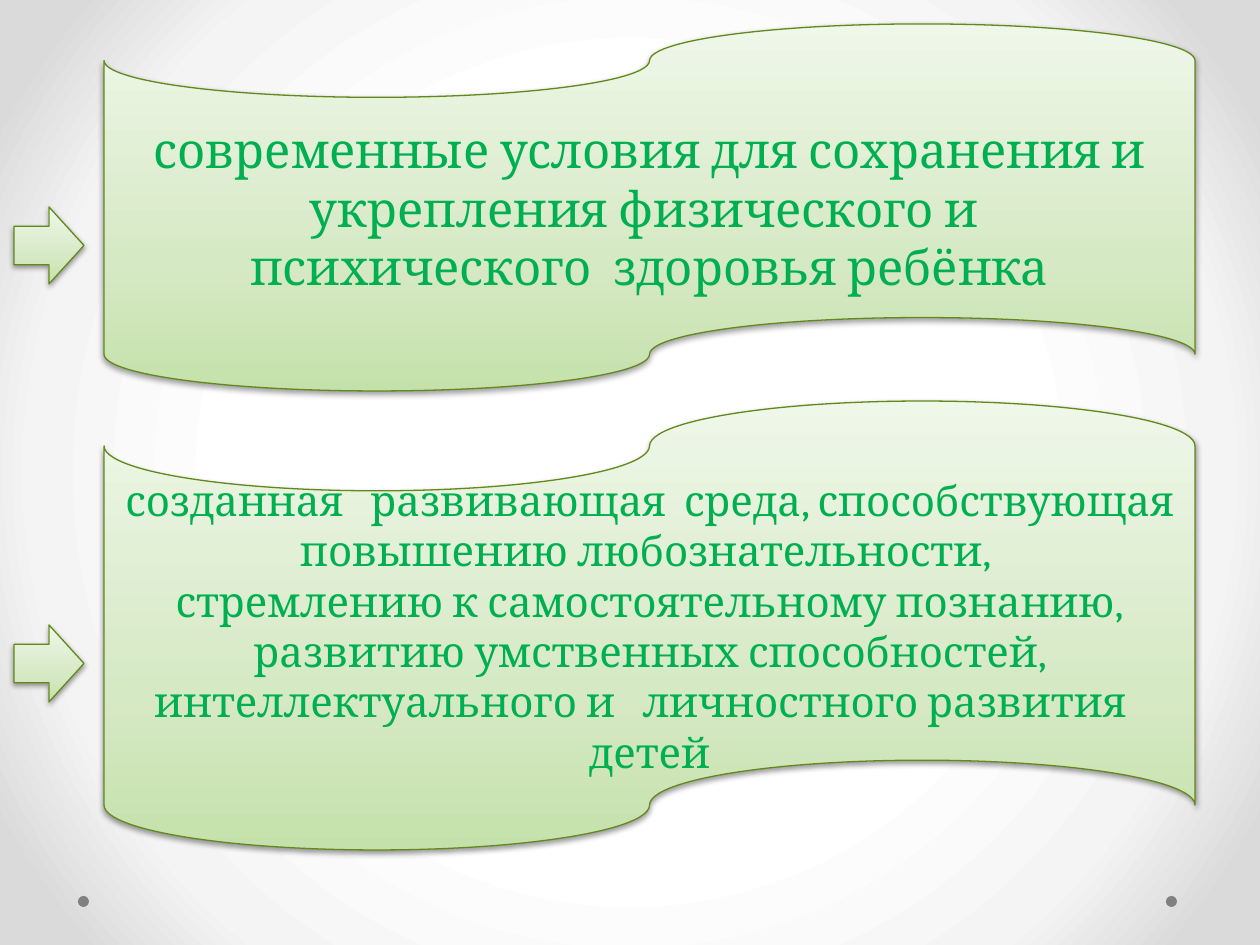
from dataclasses import dataclass

from lxml.etree import SubElement
from pptx import Presentation
from pptx.dml.color import RGBColor
from pptx.enum.shapes import MSO_SHAPE
from pptx.enum.text import MSO_ANCHOR, PP_ALIGN
from pptx.oxml.ns import qn
from pptx.util import Pt

PX = 914400 / 126


@dataclass(frozen=True)
class Theme:
    font: str = "Cambria"
    text: str = "00B050"
    line: str = "62891C"
    dot: str = "808080"
    shadow: str = "000000"
    line_width: float = 0.75
    large: int = 28
    small: int = 24
    green: tuple = ((0, "C5E1AB"), (35, "D6E9C5"), (100, "EFF7E9"))
    backdrop: tuple = ((50, "FFFFFF"), (76, "F4F4F4"), (92, "DADADA"))


THEME = Theme()

TAPES = [
    ((104, 24, 1091, 367), THEME.large, [
        "современные условия для сохранения и укрепления физического и ",
        "психического  здоровья ребёнка",
    ]),
    ((104, 401, 1091, 449), THEME.small, [
        "созданная   развивающая  среда, способствующая повышению любознательности, ",
        "стремлению к самостоятельному познанию,",
        "развитию умственных способностей, интеллектуального и   личностного развития   детей",
    ]),
]
ARROW_TOPS = (207, 625)
DOT_LEFTS = (78, 1166)


def emu(*lengths):
    return [round(n * PX) for n in lengths]


def add(parent, tag, **attrs):
    return SubElement(parent, qn(tag), {k: str(v) for k, v in attrs.items()})


def set_format(target, values):
    for name, value in values.items():
        setattr(target, name, value)


def set_gradient(fill, stops):
    """Fill with any number of stops and return the gradFill element."""
    fill.gradient()
    stop_list = fill.gradient_stops[0]._gs.getparent()
    for old in list(stop_list):
        stop_list.remove(old)
    for position, color in stops:
        stop = add(stop_list, "a:gs", pos=position * 1000)
        add(stop, "a:srgbClr", val=color)
    return stop_list.getparent()


def set_background(s):
    grad = set_gradient(s.background.fill, THEME.backdrop)
    grad.remove(grad.find(qn("a:lin")))
    circle = add(grad, "a:path", path="circle")
    add(circle, "a:fillToRect", l=50000, t=50000, r=50000, b=50000)


def add_shadow(sp):
    sp.shadow.inherit = False
    effects = sp._element.spPr.find(qn("a:effectLst"))
    shadow = add(effects, "a:outerShdw", blurRad=Pt(3.1), dist=Pt(1.6),
                 dir=90 * 60000, rotWithShape=0)
    color = add(shadow, "a:srgbClr", val=THEME.shadow)
    add(color, "a:alpha", val=38000)


def add_green_shape(s, kind, box):
    sp = s.shapes.add_shape(kind, *emu(*box))
    set_gradient(sp.fill, THEME.green)
    sp.fill.gradient_angle = 90
    sp.line.color.rgb = RGBColor.from_string(THEME.line)
    sp.line.width = Pt(THEME.line_width)
    add_shadow(sp)
    return sp


def add_tape(s, box, size, lines):
    sp = add_green_shape(s, MSO_SHAPE.FLOWCHART_PUNCHED_TAPE, box)
    tf = sp.text_frame
    set_format(tf, {"word_wrap": True, "vertical_anchor": MSO_ANCHOR.MIDDLE})
    for i, line in enumerate(lines):
        p = tf.add_paragraph() if i else tf.paragraphs[0]
        p.alignment = PP_ALIGN.CENTER
        r = p.add_run()
        r.text = line
        set_format(r.font, {"name": THEME.font, "size": Pt(size)})
        r.font.color.rgb = RGBColor.from_string(THEME.text)


def add_dot(s, left):
    sp = s.shapes.add_shape(MSO_SHAPE.OVAL, *emu(left, 896, 11, 11))
    sp.fill.solid()
    sp.fill.fore_color.rgb = RGBColor.from_string(THEME.dot)
    sp.line.fill.background()
    sp.shadow.inherit = False


def main():
    prs = Presentation()
    prs.slide_width, prs.slide_height = emu(1260, 945)
    s = prs.slides.add_slide(prs.slide_layouts[6])
    set_background(s)
    for left in DOT_LEFTS:
        add_dot(s, left)
    for box, size, lines in TAPES:
        add_tape(s, box, size, lines)
    for top in ARROW_TOPS:
        add_green_shape(s, MSO_SHAPE.RIGHT_ARROW, (14, top, 70, 77))
    prs.save("out.pptx")


if __name__ == "__main__":
    main()
